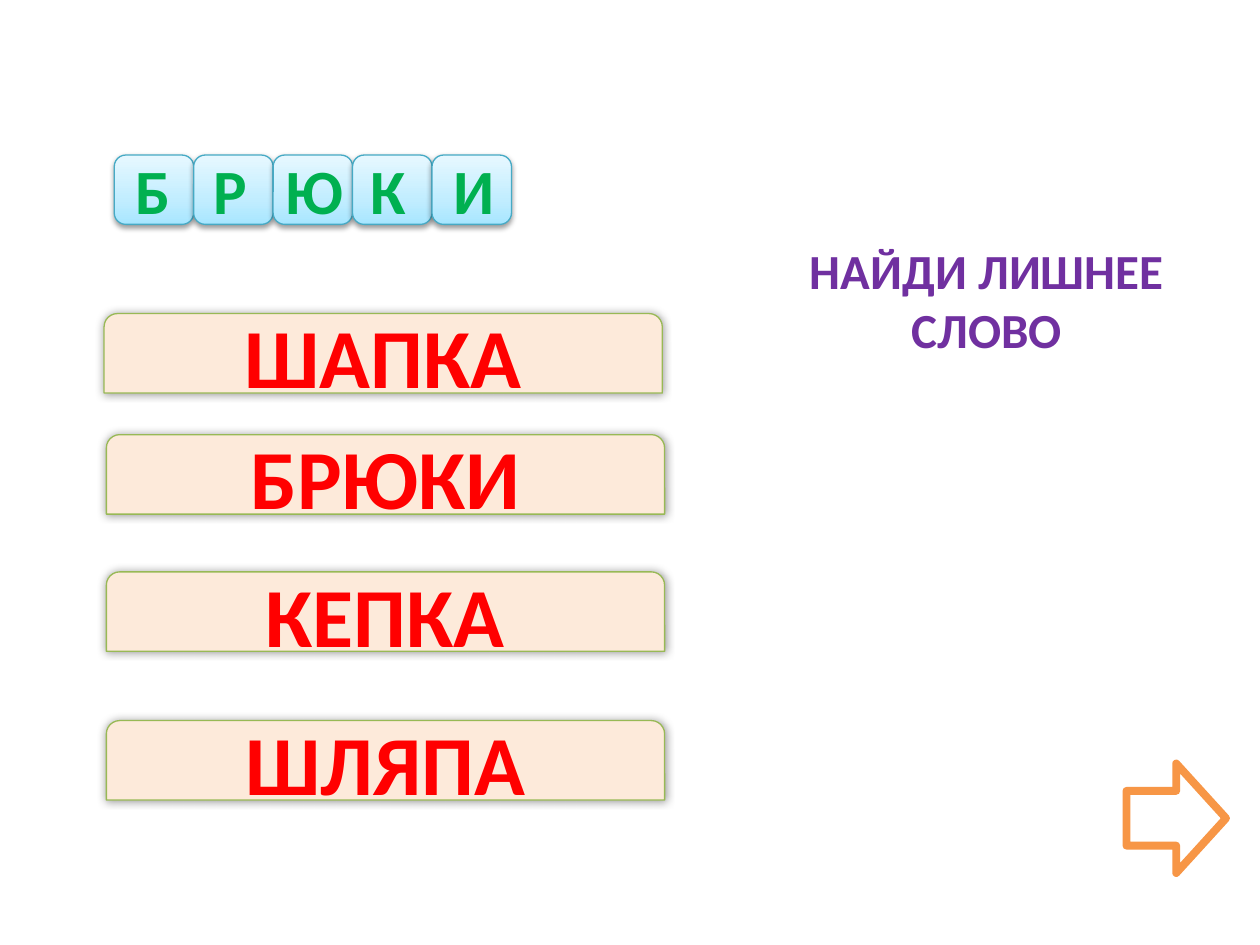
from lxml import etree
from pptx import Presentation
from pptx.dml.color import RGBColor
from pptx.enum.shapes import MSO_SHAPE
from pptx.enum.text import MSO_ANCHOR, MSO_AUTO_SIZE, PP_ALIGN
from pptx.oxml import parse_xml
from pptx.oxml.ns import nsdecls, qn
from pptx.util import Pt

TILE, CARD, ARROW = (MSO_SHAPE.ROUNDED_RECTANGLE,
                     MSO_SHAPE.ROUND_2_SAME_RECTANGLE, MSO_SHAPE.RIGHT_ARROW)
MIDDLE, FIT, CENTER = MSO_ANCHOR.MIDDLE, MSO_AUTO_SIZE.SHAPE_TO_FIT_TEXT, PP_ALIGN.CENTER

WHITE = RGBColor(0xFF, 0xFF, 0xFF)
RED = RGBColor(0xFF, 0x00, 0x00)
GREEN = RGBColor(0x00, 0xB0, 0x50)
PURPLE = RGBColor(0x70, 0x30, 0xA0)
PEACH = RGBColor(0xFD, 0xEA, 0xDA)
OLIVE = RGBColor(0x98, 0xB9, 0x55)
TEAL = RGBColor(0x46, 0xAA, 0xC5)
ORANGE = RGBColor(0xF7, 0x96, 0x46)
ICE = [(0, RGBColor(0xA7, 0xE6, 0xFF)), (35, RGBColor(0xC1, 0xED, 0xFF)),
       (100, RGBColor(0xE7, 0xF8, 0xFF))]

# Letter, left edge and width of its box
LETTERS = [("Б", 70.6, 34.6), ("Р", 115.2, 33.8), ("Ю", 156.2, 47.5),
           ("К", 204.5, 35.3), ("И", 252, 38.2)]
# Word, left and top of its card
WORDS = [("ШАПКА", 59.5, 179.2), ("БРЮКИ", 60.8, 248.4),
         ("КЕПКА", 60.8, 326.8), ("ШЛЯПА", 60.8, 411.8)]


def set_text(shape, text, size, color, align=None, **frame):
    """Write one bold line of text and apply the frame settings."""
    for key, value in frame.items():
        setattr(shape.text_frame, key, value)
    para = shape.text_frame.paragraphs[0]
    para.alignment = align
    run = para.add_run()
    run.text = text
    look = {"name": "Calibri", "size": Pt(size), "bold": True}
    for key, value in look.items():
        setattr(run.font, key, value)
    run.font.color.rgb = color


def add_box(home, kind, place, line, width, fill=None):
    box = home.add_shape(kind, *map(Pt, place))
    box.shadow.inherit = False
    if fill is not None:
        box.fill.solid()
        box.fill.fore_color.rgb = fill
    box.line.color.rgb = line
    box.line.width = Pt(width)
    return box


def add_shade(box, alpha, blur, dist, angle):
    """Put an outer black shadow into the shape's effect list."""
    effects = box._element.spPr.find(qn("a:effectLst"))
    shade = etree.SubElement(effects, qn("a:outerShdw"), blurRad=str(Pt(blur)),
                             dist=str(Pt(dist)), dir=str(angle * 60000),
                             algn="ctr", rotWithShape="0")
    tint = etree.SubElement(shade, qn("a:srgbClr"), val="000000")
    etree.SubElement(tint, qn("a:alpha"), val=str(alpha * 1000))


def add_blend(box, stops, angle):
    """Fill the shape with a gradient of any number of stops."""
    marks = "".join(f'<a:gs pos="{pos * 1000}"><a:srgbClr val="{color}"/></a:gs>'
                    for pos, color in stops)
    blend = parse_xml(f'<a:gradFill {nsdecls("a")} rotWithShape="1"><a:gsLst>{marks}'
                      f'</a:gsLst><a:lin ang="{angle * 60000}" scaled="0"/></a:gradFill>')
    box._element.spPr.find(qn("a:prstGeom")).addnext(blend)


def add_tiles(slide):
    group = slide.shapes.add_group_shape()
    side = 45.4
    for i in range(len(LETTERS)):
        tile = add_box(group.shapes, TILE, (65.3 + i * side, 88.6, side, 39.6), TEAL, 0.75)
        add_blend(tile, ICE, 270)
        add_shade(tile, 38, 3.1, 1.6, 90)


def add_cards(slide):
    for word, left, top in WORDS:
        card = add_box(slide.shapes, CARD, (left, top, 319, 45.4), OLIVE, 0.75, PEACH)
        add_shade(card, 40, 5, 0, 0)
        set_text(card, word, 48, RED, CENTER, vertical_anchor=MIDDLE)


def add_letters(slide):
    group = slide.shapes.add_group_shape()
    for letter, left, width in LETTERS:
        box = group.shapes.add_textbox(Pt(left), Pt(82.8), Pt(width), Pt(51.1))
        set_text(box, letter, 36, GREEN, word_wrap=False, auto_size=FIT)


def add_task(slide):
    box = slide.shapes.add_textbox(Pt(427.7), Pt(133.9), Pt(272.2), Pt(74.9))
    set_text(box, "НАЙДИ ЛИШНЕЕ СЛОВО", 28, PURPLE, CENTER, word_wrap=True, auto_size=FIT)


def main():
    deck = Presentation()
    deck.slide_width, deck.slide_height = Pt(720), Pt(540)
    slide = deck.slides.add_slide(deck.slide_layouts[6])

    # Answer row, word cards, then the letters over the tiles
    add_tiles(slide)
    add_cards(slide)
    add_letters(slide)

    # Task and the arrow to the next step
    add_task(slide)
    add_box(slide.shapes, ARROW, (643.7, 436.3, 56.9, 62.6), ORANGE, 4.5, WHITE)
    deck.save("out.pptx")


if __name__ == "__main__":
    main()
